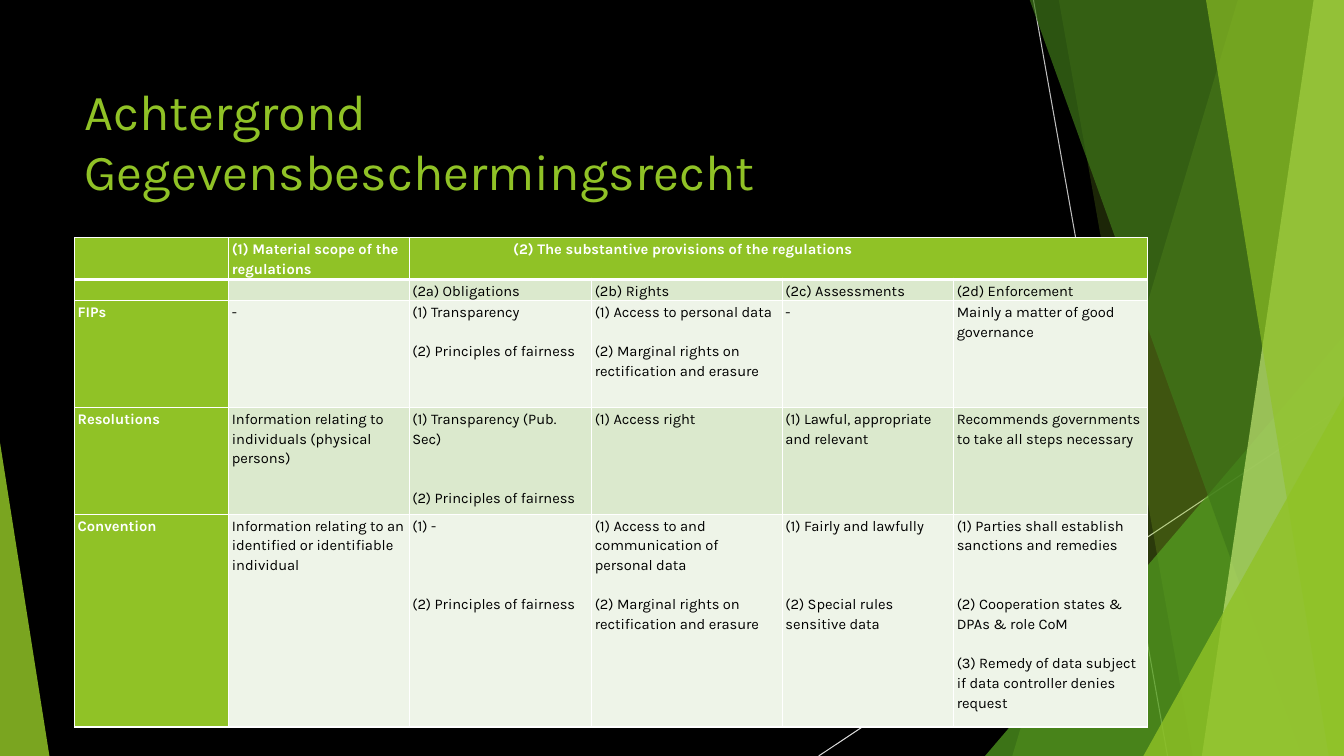
from dataclasses import dataclass

from lxml import etree
from pptx import Presentation
from pptx import util as u
from pptx.dml.color import RGBColor
from pptx.enum import shapes, text
from pptx.oxml.ns import qn


@dataclass(frozen=True)
class Theme:
    font: str = "Karla"
    title_size: float = 36
    body_size: float = 10.5
    blank_line: float = 14
    background: str = "000000"
    green: str = "90C226"
    mid_green: str = "54A021"
    dark_green: str = "3F7819"
    pale_green: str = "C0E474"
    band_dark: str = "DBE9CD"
    band_light: str = "EEF4E8"
    white: str = "FFFFFF"
    black: str = "000000"
    grey: str = "BFBFBF"
    light_grey: str = "D9D9D9"


T = Theme()


def write(tf, content, size=T.body_size, color=T.black, bold=False, spacing=1.15):
    """Write one paragraph per line; each empty line becomes space above the next."""
    p, gap = tf.paragraphs[0], 0
    for i, line in enumerate(content.split("\n")):
        if i and not line:
            gap += 1
            continue
        if i:
            p = tf.add_paragraph()
            p.space_before = u.Pt(gap * T.blank_line)
        gap = 0
        p.line_spacing = spacing
        if not line:
            etree.SubElement(p._p, qn("a:endParaRPr"), sz=str(int(size * 100)))
            continue
        r = p.add_run()
        r.text = line
        r.font.name, r.font.size, r.font.bold = T.font, u.Pt(size), bold
        r.font.color.rgb = RGBColor.from_string(color)


def paint(sp, color, opacity):
    sp.shadow.inherit = False
    sp.line.fill.background()
    sp.fill.solid()
    sp.fill.fore_color.rgb = RGBColor.from_string(color)
    clr = sp._element.spPr.find(qn("a:solidFill"))[0]
    etree.SubElement(clr, qn("a:alpha"), val=str(opacity * 1000))


prs = Presentation()
prs.slide_width, prs.slide_height = u.Inches(13.33), u.Inches(7.5)
s = prs.slides.add_slide(prs.slide_layouts[6])
s.background.fill.solid()
s.background.fill.fore_color.rgb = RGBColor.from_string(T.background)

# Thin lines behind the facets
for x1, y1, x2, y2, color in [
    (10.25, 0, 11.58, 7.5, T.grey),
    (13.33, 4.03, 8.12, 7.5, T.light_grey),
]:
    line = s.shapes.add_connector(
        shapes.MSO_CONNECTOR.STRAIGHT, *map(u.Inches, (x1, y1, x2, y2)))
    line.line.color.rgb = RGBColor.from_string(color)
    line.line.width = u.Pt(0.75)
    etree.SubElement(line._element.spPr, qn("a:effectLst"))

# Facets: a band from its top-left and bottom-left x to the right edge,
# or a triangle (left, top, width, height, apex)
for geometry, color, opacity in [
    ((12.28, 10.04), T.green, 30),
    ((10.5, 11.83), T.green, 20),
    ((9.77, 3.33, 3.56, 4.17, 1), T.mid_green, 72),
    ((10.21, 12.91), T.dark_green, 70),
    ((13.03, 11.92), T.pale_green, 70),
    ((11.96, 13.18), T.green, 65),
    ((11.34, 3.93, 1.99, 3.57, 1), T.green, 80),
    ((0, 4.39, 0.49, 3.11, 0), T.green, 85),
]:
    if len(geometry) == 2:
        top_x, bottom_x = geometry
        corners = [(13.33, -0.01), (13.33, 7.5), (bottom_x, 7.5)]
        outline = s.shapes.build_freeform(u.Inches(top_x), u.Inches(-0.01))
        outline.add_line_segments([(u.Inches(x), u.Inches(y)) for x, y in corners])
        sp = outline.convert_to_shape()
    else:
        *box, apex = geometry
        sp = s.shapes.add_shape(
            shapes.MSO_SHAPE.ISOSCELES_TRIANGLE, *map(u.Inches, box))
        sp.adjustments[0] = apex
    paint(sp, color, opacity)

title = s.shapes.add_textbox(*map(u.Inches, (0.74, 0.67, 9.4, 1.44)))
title.text_frame.word_wrap = True
title.text_frame.vertical_anchor = text.MSO_ANCHOR.MIDDLE
write(title.text_frame, "Achtergrond Gegevensbeschermingsrecht",
      size=T.title_size, color=T.green, spacing=1.0)

rows = [
    ["", "(1) Material scope of the regulations",
     "(2) The substantive provisions of the regulations", "", "", ""],
    ["", "", "(2a) Obligations", "(2b) Rights", "(2c) Assessments", "(2d) Enforcement"],
    ["FIPs", "-",
     "(1) Transparency\n\n(2) Principles of fairness",
     "(1) Access to personal data\n\n(2) Marginal rights on rectification and erasure",
     "-", "Mainly a matter of good governance"],
    ["Resolutions", "Information relating to individuals (physical persons)",
     "(1) Transparency (Pub. Sec)\n\n\n(2) Principles of fairness",
     "(1) Access right", "(1) Lawful, appropriate and relevant",
     "Recommends governments to take all steps necessary"],
    ["Convention", "Information relating to an identified or identifiable individual",
     "(1) -\n\n\n\n(2) Principles of fairness",
     "(1) Access to and communication of personal data\n\n"
     "(2) Marginal rights on rectification and erasure",
     "(1) Fairly and lawfully\n\n\n\n(2) Special rules sensitive data",
     "(1) Parties shall establish sanctions and remedies\n\n\n"
     "(2) Cooperation states & DPAs & role CoM\n\n"
     "(3) Remedy of data subject if data controller denies request"],
]
widths = [1.53, 1.79, 1.81, 1.89, 1.7, 1.92]
heights = [0.37, 0.19, 1.06, 1.06, 2.11]

table = s.shapes.add_table(
    len(rows), len(widths), *map(u.Inches, (0.74, 2.36, 10.64, 4.82))).table
for column, width in zip(table.columns, widths):
    column.width = u.Inches(width)
for row, height in zip(table.rows, heights):
    row.height = u.Inches(height)
table.cell(0, 2).merge(table.cell(0, 5))

for i, row in enumerate(rows):
    for j, content in enumerate(row):
        cell = table.cell(i, j)
        heading = i == 0 or j == 0
        cell.margin_left = u.Inches(1.03 if (i, j) == (0, 2) else 0.03)
        cell.margin_right = u.Inches(0.03)
        cell.margin_top, cell.margin_bottom = u.Inches(0.01), 0
        write(cell.text_frame, content, bold=heading,
              color=T.white if heading else T.black)
        for side in "LRTB":
            if i == 1 and side == "T":
                continue  # the header's thick rule is this edge
            weight = 3 if i == 0 and side == "B" else 1
            ln = etree.SubElement(cell._tc.get_or_add_tcPr(), qn(f"a:ln{side}"),
                                  w=str(u.Pt(weight)))
            fill = etree.SubElement(ln, qn("a:solidFill"))
            etree.SubElement(fill, qn("a:srgbClr"), val=T.white)
        band = T.band_dark if i % 2 else T.band_light
        cell.fill.solid()
        cell.fill.fore_color.rgb = RGBColor.from_string(T.green if heading else band)

prs.save("out.pptx")
